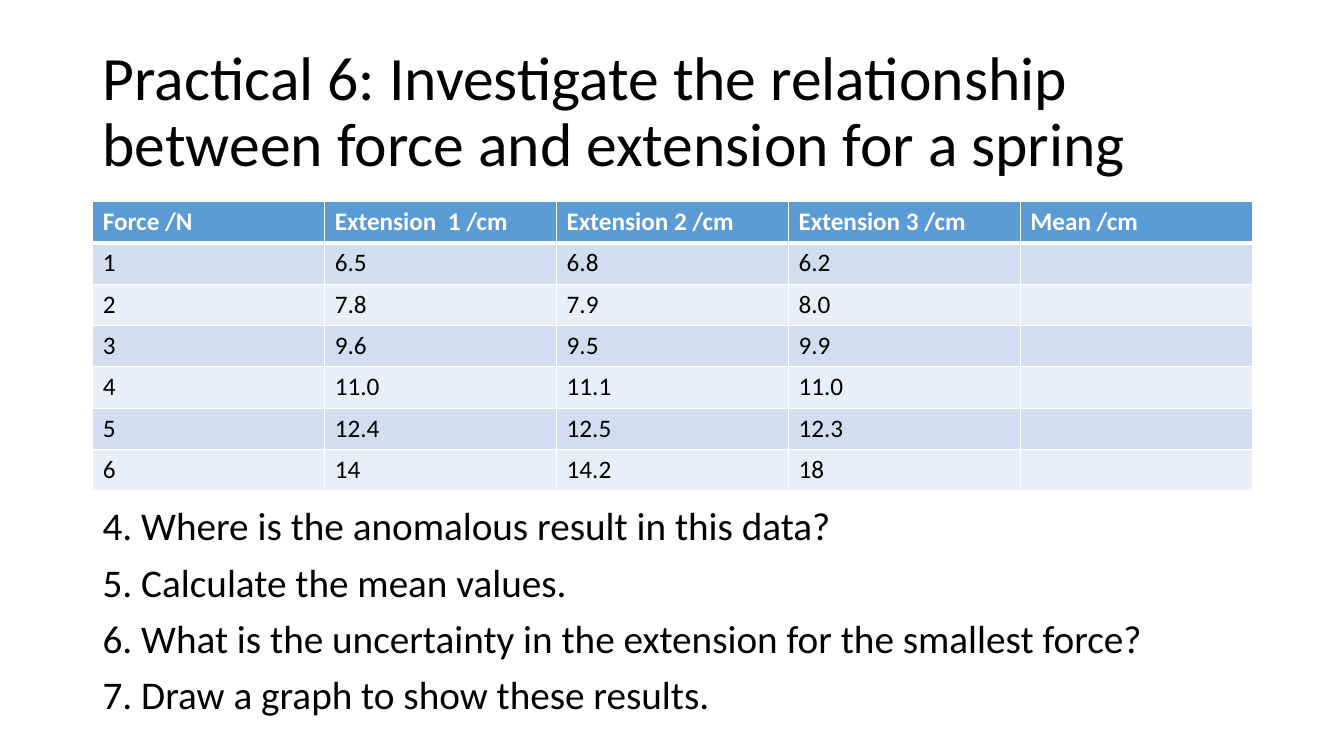
from lxml import etree
from pptx import Presentation
from pptx import util as u
from pptx.dml.color import RGBColor
from pptx.enum import text
from pptx.oxml.ns import qn

COLORS = {
    "ink": "000000", "paper": "FFFFFF", "header": "5B9BD5",
    "odd": "D2DEEF", "even": "EAEFF7",
}
FONT = "Calibri"
SLIDE_WIDTH, SLIDE_HEIGHT = 13.33, 7.5
LEFT, CONTENT_WIDTH = 0.92, 11.5
ROW_HEIGHT = 0.41

TITLE = ("Practical 6: Investigate the relationship "
         "between force and extension for a spring")
RESULTS = [
    ["Force /N", "Extension  1 /cm", "Extension 2 /cm", "Extension 3 /cm", "Mean /cm"],
    ["1", "6.5", "6.8", "6.2", ""],
    ["2", "7.8", "7.9", "8.0", ""],
    ["3", "9.6", "9.5", "9.9", ""],
    ["4", "11.0", "11.1", "11.0", ""],
    ["5", "12.4", "12.5", "12.3", ""],
    ["6", "14", "14.2", "18", ""],
]
QUESTIONS = [
    "4. Where is the anomalous result in this data?",
    "5. Calculate the mean values.",
    "6. What is the uncertainty in the extension for the smallest force?",
    "7. Draw a graph to show these results.",
]


def write(para, words, size=18, color="ink", bold=False, line=None, before=None):
    """Put formatted words into a paragraph."""
    para.line_spacing = line
    if before is not None:
        para.space_before = u.Pt(before)
    if words:
        span = para.add_run()
        span.text = words
        span.font.name = FONT
        span.font.size = u.Pt(size)
        span.font.bold = bold
        span.font.color.rgb = RGBColor.from_string(COLORS[color])


def add_text(page, box, lines, anchor=text.MSO_ANCHOR.TOP, **style):
    """Add a wrapped text box with one paragraph per line."""
    frame = page.shapes.add_textbox(*map(u.Inches, box)).text_frame
    frame.word_wrap = True
    frame.vertical_anchor = anchor
    for index, words in enumerate(lines):
        para = frame.add_paragraph() if index else frame.paragraphs[0]
        write(para, words, line=0.9, **style)


def set_borders(cell, **widths):
    """Draw white cell borders with the given point widths."""
    properties = cell._tc.get_or_add_tcPr()
    for side in "LRTB":
        border = etree.SubElement(properties, qn(f"a:ln{side}"),
                                  w=str(u.Pt(widths.get(side, 1))))
        fill = etree.SubElement(border, qn("a:solidFill"))
        etree.SubElement(fill, qn("a:srgbClr"), val=COLORS["paper"])


def add_results(page, box, rows):
    """Add the banded results table with a heavier rule below its header."""
    table = page.shapes.add_table(len(rows), len(rows[0]), *map(u.Inches, box)).table
    for row_index, values in enumerate(rows):
        header = row_index == 0
        band = "header" if header else ("even", "odd")[row_index % 2]
        widths = {0: {"B": 3}, 1: {"T": 3}}.get(row_index, {})
        for column_index, words in enumerate(values):
            cell = table.cell(row_index, column_index)
            set_borders(cell, **widths)
            cell.fill.solid()
            cell.fill.fore_color.rgb = RGBColor.from_string(COLORS[band])
            write(cell.text_frame.paragraphs[0], words, bold=header,
                  color="paper" if header else "ink")


def build_practical(page):
    """Place the title, results table and questions on the page."""
    add_text(page, (LEFT, 0.4, CONTENT_WIDTH, 1.45), [TITLE],
             anchor=text.MSO_ANCHOR.MIDDLE, size=44)
    add_results(page, (LEFT, 2, CONTENT_WIDTH, ROW_HEIGHT * len(RESULTS)), RESULTS)
    add_text(page, (LEFT, 4.98, CONTENT_WIDTH, 2.35), QUESTIONS, size=28, before=10)


def main():
    """Build and save the deck."""
    deck = Presentation()
    deck.slide_width = u.Inches(SLIDE_WIDTH)
    deck.slide_height = u.Inches(SLIDE_HEIGHT)
    build_practical(deck.slides.add_slide(deck.slide_layouts[6]))
    deck.save("out.pptx")


if __name__ == "__main__":
    main()
